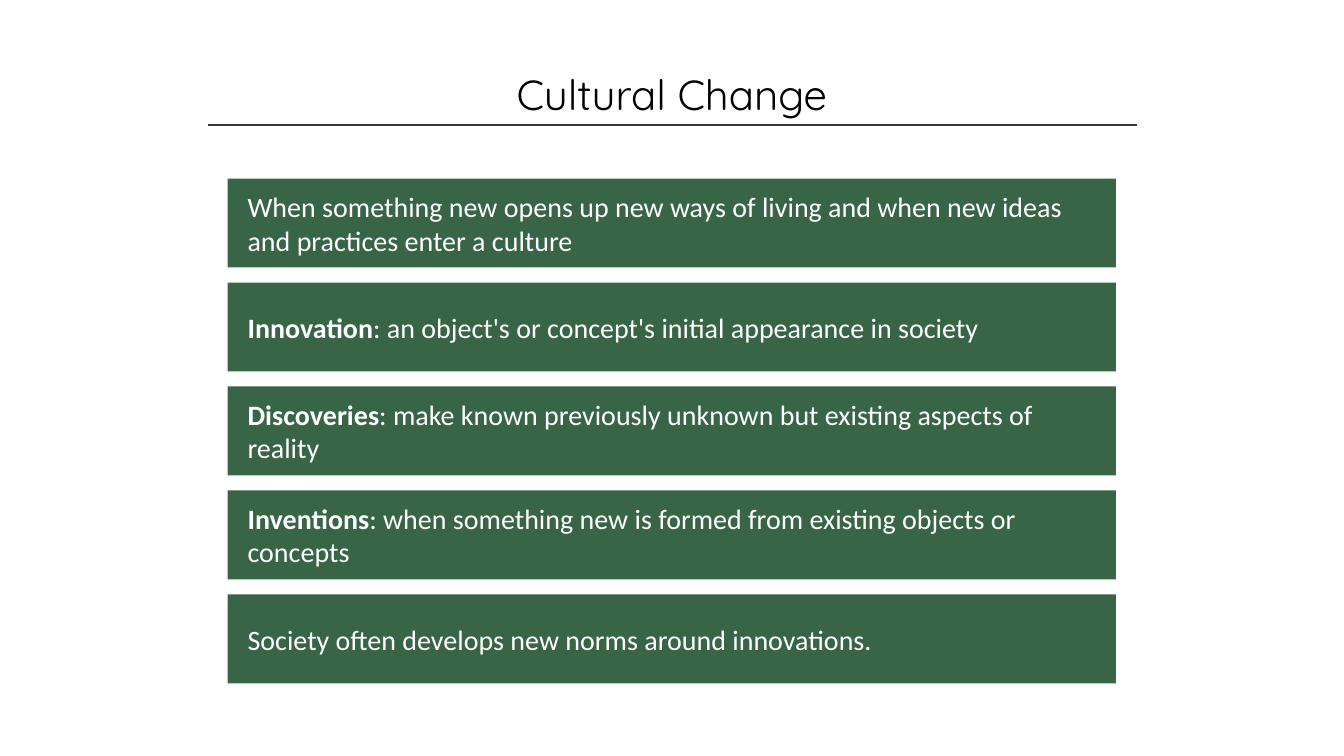
from lxml import etree
from pptx import Presentation
from pptx.dml.color import RGBColor
from pptx.enum.shapes import MSO_CONNECTOR, MSO_SHAPE
from pptx.enum.text import MSO_ANCHOR, PP_ALIGN
from pptx.oxml.ns import qn
from pptx.util import Cm, Pt

BLACK = RGBColor(0x00, 0x00, 0x00)
WHITE = RGBColor(0xFF, 0xFF, 0xFF)
GREEN = RGBColor(0x38, 0x65, 0x46)
SLATE = RGBColor(0x32, 0x35, 0x42)

CARD_TOP = 4.5
CARD_PITCH = 2.62

# Each card: bold term (may be empty) and the text after it
CARDS = [
    ("", "When something new opens up new ways of living and when new ideas "
         "and practices enter a culture"),
    ("Innovation", ": an object's or concept's initial appearance in society"),
    ("Discoveries", ": make known previously unknown but existing aspects of reality"),
    ("Inventions", ": when something new is formed from existing objects or concepts"),
    ("", "Society often develops new norms around innovations."),
]


def style_font(paragraph, name, size, color):
    paragraph.font.name = name
    paragraph.font.size = Pt(size)
    paragraph.font.color.rgb = color


def add_title(slide, text):
    title = slide.shapes.add_textbox(Cm(4.23), Cm(1.6), Cm(25.4), Cm(1.54))
    title.text_frame.word_wrap = True
    heading = title.text_frame.paragraphs[0]
    heading.text = text
    heading.alignment = PP_ALIGN.CENTER
    style_font(heading, "Quicksand", 30, BLACK)


def add_title_rule(slide):
    rule = slide.shapes.add_connector(
        MSO_CONNECTOR.STRAIGHT, Cm(5.23), Cm(3.15), Cm(28.65), Cm(3.15))
    rule.line.color.rgb = SLATE
    rule.line.width = Pt(1)
    etree.SubElement(rule._element.spPr, qn("a:effectLst"))


def add_card(slide, top, term, explanation):
    card = slide.shapes.add_shape(
        MSO_SHAPE.RECTANGLE, Cm(5.74), Cm(top), Cm(22.38), Cm(2.24))
    card.shadow.inherit = False
    card.fill.solid()
    card.fill.fore_color.rgb = GREEN
    card.line.fill.background()

    frame = card.text_frame
    frame.word_wrap = True
    frame.vertical_anchor = MSO_ANCHOR.MIDDLE
    frame.margin_left = Cm(0.5)
    frame.margin_right = Cm(0.69)
    statement = frame.paragraphs[0]
    statement.alignment = PP_ALIGN.LEFT
    if term:
        term_run = statement.add_run()
        term_run.text = term
        term_run.font.bold = True
    statement.add_run().text = explanation
    style_font(statement, "Calibri", 20, WHITE)


def main():
    prs = Presentation()
    prs.slide_width = Cm(33.87)
    prs.slide_height = Cm(19.05)
    slide = prs.slides.add_slide(prs.slide_layouts[6])

    add_title(slide, "Cultural Change")
    add_title_rule(slide)
    for row, (term, explanation) in enumerate(CARDS):
        add_card(slide, CARD_TOP + row * CARD_PITCH, term, explanation)

    prs.save("out.pptx")


if __name__ == "__main__":
    main()
